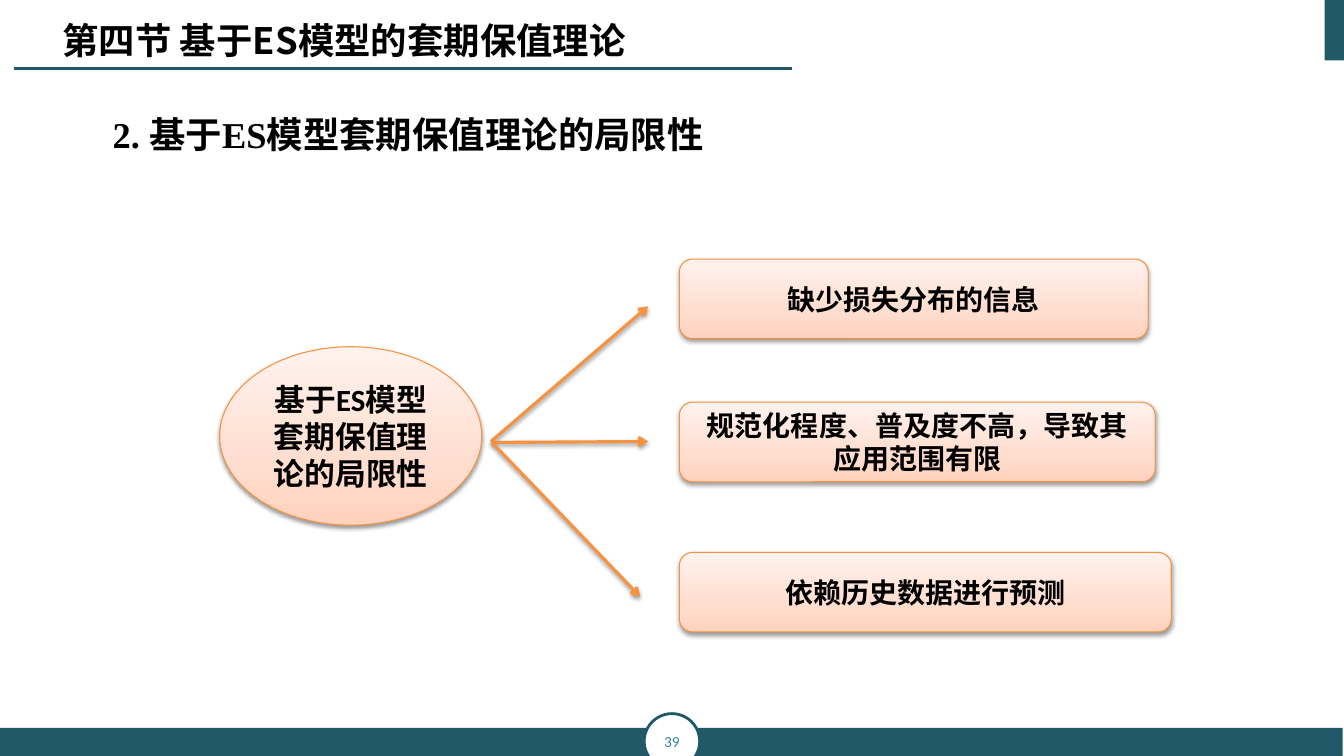
from lxml import etree
from pptx import Presentation
from pptx.dml.color import RGBColor
from pptx.enum.shapes import MSO_CONNECTOR, MSO_SHAPE
from pptx.enum.text import MSO_ANCHOR, MSO_AUTO_SIZE, PP_ALIGN
from pptx.oxml.ns import qn
from pptx.util import Inches, Pt

RECTANGLE, ROUNDED, OVAL = MSO_SHAPE.RECTANGLE, MSO_SHAPE.ROUNDED_RECTANGLE, MSO_SHAPE.OVAL
STRAIGHT = MSO_CONNECTOR.STRAIGHT
MIDDLE, TOP = MSO_ANCHOR.MIDDLE, MSO_ANCHOR.TOP
CENTER, LEFT = PP_ALIGN.CENTER, PP_ALIGN.LEFT
GROW = MSO_AUTO_SIZE.SHAPE_TO_FIT_TEXT

WHITE = RGBColor(0xFF, 0xFF, 0xFF)
BLACK = RGBColor(0, 0, 0)
TEAL = RGBColor(0x21, 0x59, 0x68)
PAGE_BLUE = RGBColor(0x31, 0x85, 0x9C)
ORANGE = RGBColor(0xF6, 0x92, 0x40)
PEACH_STOPS = (
    (0, RGBColor(0xFF, 0xD2, 0xBD)),
    (35, RGBColor(0xFF, 0xDE, 0xD0)),
    (100, RGBColor(0xFF, 0xF2, 0xED)),
)

SANS, SERIF, CHINESE = "Calibri", "Times New Roman", "Noto Sans CJK SC"
SLIDE_WIDTH, SLIDE_HEIGHT = Inches(13.333), Inches(7.5)
COLUMN, ROW = SLIDE_WIDTH / 100, SLIDE_HEIGHT / 100

BOX_LEFT, BOX_HEIGHT = 50.55, 10.53
LIMITS = (
    ("缺少损失分布的信息", SERIF, 34.27, 34.88, (48.22, 40.53)),
    ("规范化程度、普及度不高，导致其应用范围有限", SANS, 53.2, 35.4, (48.22, 58.4)),
    ("依赖历史数据进行预测", SANS, 73.07, 36.6, (47.63, 78.93)),
)


def place(left, top, width, height):
    """Turn grid columns and rows into lengths."""
    return round(left * COLUMN), round(top * ROW), round(width * COLUMN), round(height * ROW)


def add_element(parent, tag, **attributes):
    """Append an XML element and return it."""
    values = {name: str(value) for name, value in attributes.items()}
    return etree.SubElement(parent, qn(tag), values)


def add_color(parent, color):
    """Append a solid colour element and return it."""
    return add_element(parent, "a:srgbClr", val=color)


def add_shadow(shape):
    """Give a shape or connector a soft shadow straight below."""
    properties = shape._element.spPr
    effects = properties.find(qn("a:effectLst"))
    if effects is None:
        effects = add_element(properties, "a:effectLst")
    shadow = add_element(effects, "a:outerShdw", blurRad=Pt(3.1), dist=Pt(1.6),
                         dir=5400000, rotWithShape=0)
    add_element(add_color(shadow, BLACK), "a:alpha", val=38000)


def fill_peach(shape):
    """Fill a shape with the peach gradient, darkest at the bottom."""
    shape.fill.gradient()
    shape.fill.gradient_angle = 90
    stops = shape._element.spPr.find(qn("a:gradFill")).find(qn("a:gsLst"))
    for stop in list(stops):
        stops.remove(stop)
    for share, color in PEACH_STOPS:
        add_color(add_element(stops, "a:gs", pos=share * 1000), color)


def write_text(shape, text, size, font, color=BLACK, bold=True, align=CENTER, anchor=MIDDLE):
    """Write one formatted paragraph into a shape and return it."""
    frame = shape.text_frame
    frame.word_wrap = True
    frame.vertical_anchor = anchor
    paragraph = frame.paragraphs[0]
    paragraph.text = text
    paragraph.alignment = align
    paragraph.font.name = font
    paragraph.font.size = Pt(size)
    paragraph.font.bold = bold
    paragraph.font.color.rgb = color
    latin = paragraph._p.pPr.find(qn("a:defRPr")).find(qn("a:latin"))
    latin.addnext(latin.makeelement(qn("a:ea"), {"typeface": CHINESE}))
    return paragraph


def add_flat_shape(slide, kind, area, fill, line=None):
    """Add a plain filled shape with an optional outline."""
    shape = slide.shapes.add_shape(kind, *place(*area))
    shape.shadow.inherit = False
    shape.fill.solid()
    shape.fill.fore_color.rgb = fill
    if line is None:
        shape.line.fill.background()
    else:
        shape.line.color.rgb = line
        shape.line.width = Pt(2)
    return shape


def add_peach_shape(slide, kind, area, text, size, font):
    """Add a shaded diagram shape with centred text."""
    shape = slide.shapes.add_shape(kind, *place(*area))
    shape.shadow.inherit = False
    fill_peach(shape)
    shape.line.color.rgb = ORANGE
    shape.line.width = Pt(0.75)
    add_shadow(shape)
    write_text(shape, text, size, font)


def add_line(slide, start, end, color, width):
    """Add a straight line between two grid points."""
    points = place(*start, *end)
    connector = slide.shapes.add_connector(STRAIGHT, *points)
    connector.line.color.rgb = color
    connector.line.width = Pt(width)
    add_element(connector._element.spPr, "a:effectLst")
    return connector


def add_arrow(slide, start, end):
    """Add a shadowed orange arrow."""
    connector = add_line(slide, start, end, ORANGE, 2.25)
    add_element(connector.line._get_or_add_ln(), "a:tailEnd", type="arrow")
    add_shadow(connector)


def add_heading(slide, area, text, font):
    """Add a left-aligned heading; return its frame and paragraph."""
    box = slide.shapes.add_textbox(*place(*area))
    paragraph = write_text(box, text, 26, font, align=LEFT, anchor=TOP)
    return box.text_frame, paragraph


def add_page_frame(slide):
    """Add the corner block, footer, page number and title rule."""
    add_flat_shape(slide, RECTANGLE, (98.55, 0, 1.45, 8), TEAL)
    add_flat_shape(slide, RECTANGLE, (0, 96.27, 99.9, 3.73), TEAL)
    badge = add_flat_shape(slide, OVAL, (47.93, 94.4, 4.13, 7.33), WHITE, TEAL)
    frame = badge.text_frame
    frame.margin_left = frame.margin_right = 0
    write_text(badge, "39", 11, SANS, PAGE_BLUE, bold=False)
    add_line(slide, (58.95, 9.07), (1.05, 9.07), TEAL, 1.5)


def add_headings(slide):
    """Add the numbered subheading and the section title."""
    _, subheading = add_heading(slide, (3.9, 10.13, 93.9, 82.13),
                                "2. 基于ES模型套期保值理论的局限性", SERIF)
    subheading.line_spacing = 1.7
    subheading._p.pPr.set("marL", "0")
    subheading._p.pPr.set("indent", str(Inches(0.5)))
    title_frame, _ = add_heading(slide, (3.9, 1.73, 58.5, 7.2),
                                 "第四节 基于ES模型的套期保值理论", CHINESE)
    title_frame.auto_size = GROW


def add_diagram(slide):
    """Add the central oval with an arrow to each limitation."""
    add_peach_shape(slide, OVAL, (16.35, 45.87, 19.5, 23.6),
                    "基于ES模型套期保值理论的局限性", 22, SANS)
    for index, (text, font, top, width, arrow_end) in enumerate(LIMITS):
        add_arrow(slide, (36.53 + 0.07 * index, 58.4 + 0.13 * index), arrow_end)
        add_peach_shape(slide, ROUNDED, (BOX_LEFT, top, width, BOX_HEIGHT), text, 20, font)


def main():
    """Build and save the slide."""
    presentation = Presentation()
    presentation.slide_width = SLIDE_WIDTH
    presentation.slide_height = SLIDE_HEIGHT
    slide = presentation.slides.add_slide(presentation.slide_layouts[6])
    add_page_frame(slide)
    add_headings(slide)
    add_diagram(slide)
    presentation.save("out.pptx")


if __name__ == "__main__":
    main()
